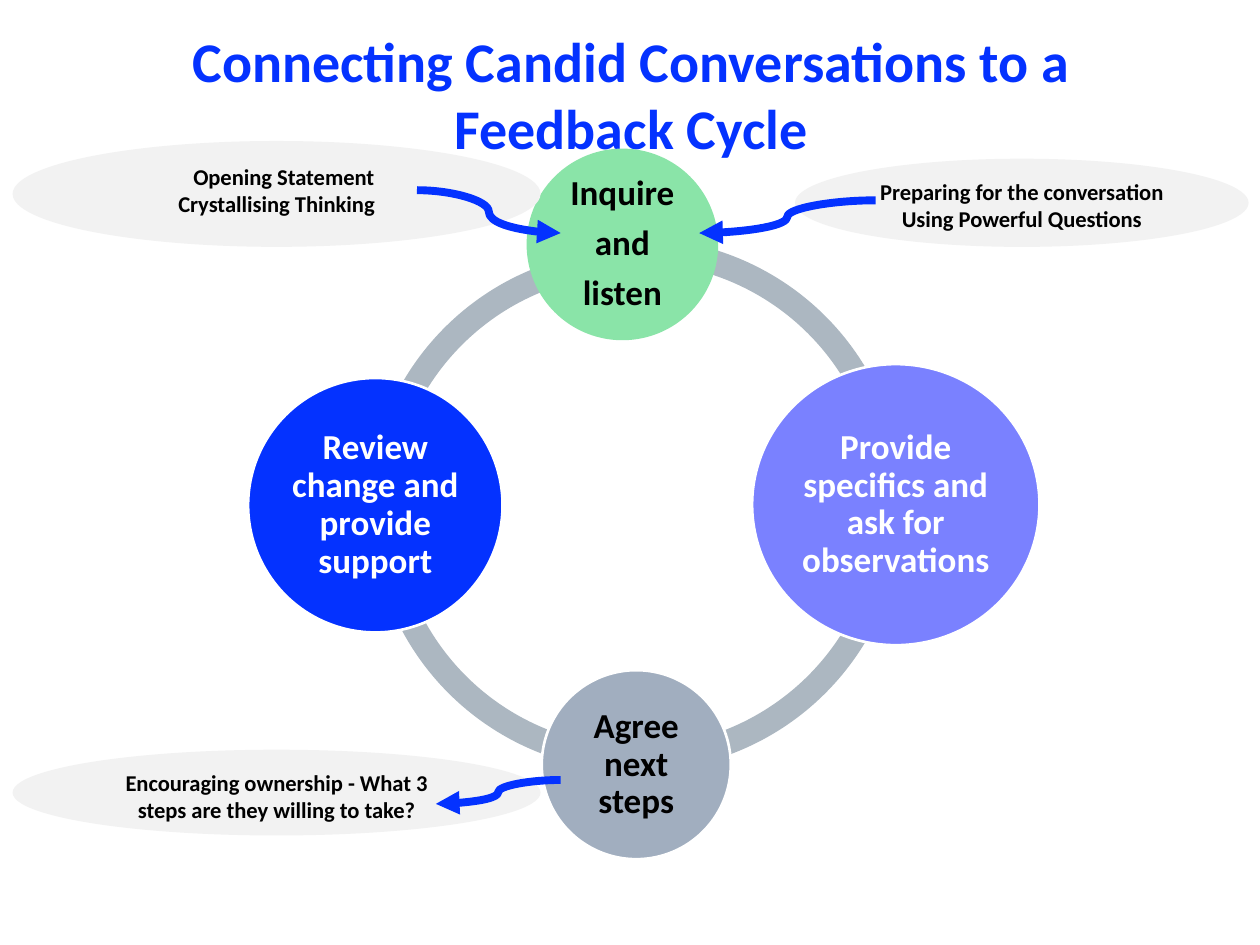
import pptx
import pptx.dml.color
import pptx.enum.shapes
import pptx.enum.text
import pptx.oxml
import pptx.oxml.ns
import pptx.util

Pt = pptx.util.Pt
SHAPE = pptx.enum.shapes.MSO_SHAPE
ALIGN = pptx.enum.text.PP_ALIGN
ANCHOR = pptx.enum.text.MSO_ANCHOR

COLOURS = {
    "blue": "0432FF",
    "violet": "7A81FF",
    "green": "8AE4A8",
    "slate": "A1AEBF",
    "ring": "ACB7C1",
    "callout": "F2F2F2",
    "white": "FFFFFF",
    "black": "000000",
}


def rgb(name):
    return pptx.dml.color.RGBColor.from_string(COLOURS[name])


def apply(target, values):
    for name, value in values.items():
        setattr(target, name, value)


class CycleSlide:
    """Holds the text style and the slide that receives the elements."""

    font_name = "Calibri"
    circle_frame = dict.fromkeys(
        ("margin_left", "margin_top", "margin_right", "margin_bottom"), Pt(2))
    circle_paragraph = {"line_spacing": 0.9, "space_after": Pt(7)}

    def __init__(self, slide):
        self.slide = slide

    def add_lines(self, shape, lines, size, colour, frame=None, paragraph=None):
        text_frame = shape.text_frame
        apply(text_frame, {"word_wrap": True, "vertical_anchor": ANCHOR.TOP, **(frame or {})})
        for index, line in enumerate(lines):
            item = text_frame.add_paragraph() if index else text_frame.paragraphs[0]
            apply(item, {"alignment": ALIGN.CENTER, **(paragraph or {})})
            run = item.add_run()
            run.text = line
            apply(run.font, {"name": self.font_name, "size": Pt(size), "bold": True})
            run.font.color.rgb = rgb(colour)

    def shape(self, kind, box, fill, line=None):
        shape = self.slide.shapes.add_shape(kind, *map(Pt, box))
        shape.shadow.inherit = False
        shape.fill.solid()
        shape.fill.fore_color.rgb = rgb(fill)
        if line:
            shape.line.color.rgb = rgb(line)
            shape.line.width = Pt(1.5)
        else:
            shape.line.fill.background()
        return shape

    def title(self, text, box):
        shape = self.slide.shapes.add_textbox(*map(Pt, box))
        self.add_lines(shape, [text], 32, "blue",
                       {"auto_size": pptx.enum.text.MSO_AUTO_SIZE.SHAPE_TO_FIT_TEXT})

    def arc(self, box, start, end):
        """Draws a ring segment; the angles are block arc adjustments (54 is 90 degrees)."""
        shape = self.shape(SHAPE.BLOCK_ARC, box, "ring")
        for index, value in enumerate((start, end, 0.046)):
            shape.adjustments[index] = value

    def circle(self, lines, box, fill, line, text_colour):
        shape = self.shape(SHAPE.OVAL, box, fill, line)
        self.add_lines(shape, lines, 20, text_colour,
                       {**self.circle_frame, "vertical_anchor": ANCHOR.MIDDLE},
                       self.circle_paragraph)

    def callout(self, lines, box, first_indent=0):
        """Draws a grey oval; first_indent sets the first line flush left at that distance."""
        shape = self.shape(SHAPE.OVAL, box, "callout")
        self.add_lines(shape, lines, 12.9, "black")
        if first_indent:
            first = shape.text_frame.paragraphs[0]
            first.alignment = ALIGN.LEFT
            first._p.get_or_add_pPr().set("marL", str(Pt(first_indent)))

    def arrow(self, start, end):
        connector = self.slide.shapes.add_connector(
            pptx.enum.shapes.MSO_CONNECTOR.CURVE, *map(Pt, start + end))
        connector.line.color.rgb = rgb("blue")
        connector.line.width = Pt(4.5)
        namespace = pptx.oxml.ns.nsdecls("a")
        line = connector.line._get_or_add_ln()
        line.append(pptx.oxml.parse_xml(f'<a:tailEnd {namespace} type="triangle"/>'))
        connector._element.spPr.append(pptx.oxml.parse_xml(f"<a:effectLst {namespace}/>"))


def main():
    presentation = pptx.Presentation()
    presentation.slide_width, presentation.slide_height = Pt(720), Pt(540)
    cycle = CycleSlide(presentation.slides.add_slide(presentation.slide_layouts[6]))

    cycle.title("Connecting Candid Conversations to a Feedback Cycle", (60.5, 11.5, 600.5, 46))

    ring = (211.7, 136.1, 304.6, 304.6)
    cycle.arc((209.5, 142.6, 304.6, 304.6), 107.95, 160.1)
    for start, end in ((54, 108), (0, 54), (160.1, 0.05)):
        cycle.arc(ring, start, end)

    for lines, box, fill, line, text_colour in (
        (["Inquire", "and", "listen"], (301.7, 85.7, 108, 108), "green", "green", "black"),
        (["Provide specifics and ask for observations"],
         (429.8, 208.1, 164.2, 160.6), "violet", "white", "white"),
        (["Agree next steps"], (309.6, 383, 108, 108), "slate", "white", "black"),
        (["Review change and provide support"],
         (141.8, 216, 145.4, 145.4), "blue", "white", "white"),
    ):
        cycle.circle(lines, box, fill, line, text_colour)

    for lines, box, first_indent, start, end in (
        (["Opening Statement", "Crystallising Thinking"],
         (7.2, 80.6, 301.7, 60.5), 52, (238.3, 108.7), (320.4, 133.2)),
        (["Encouraging ownership - What 3 steps are they willing to take?"],
         (7.2, 428.4, 301.7, 49), 0, (320.4, 445.7), (249.1, 459.4)),
        (["Preparing for the conversation", "Using Powerful Questions"],
         (454.3, 90.7, 259.2, 50.4), 0, (500.4, 114.5), (399.6, 133.2)),
    ):
        cycle.callout(lines, box, first_indent)
        cycle.arrow(start, end)

    presentation.save("out.pptx")


if __name__ == "__main__":
    main()
